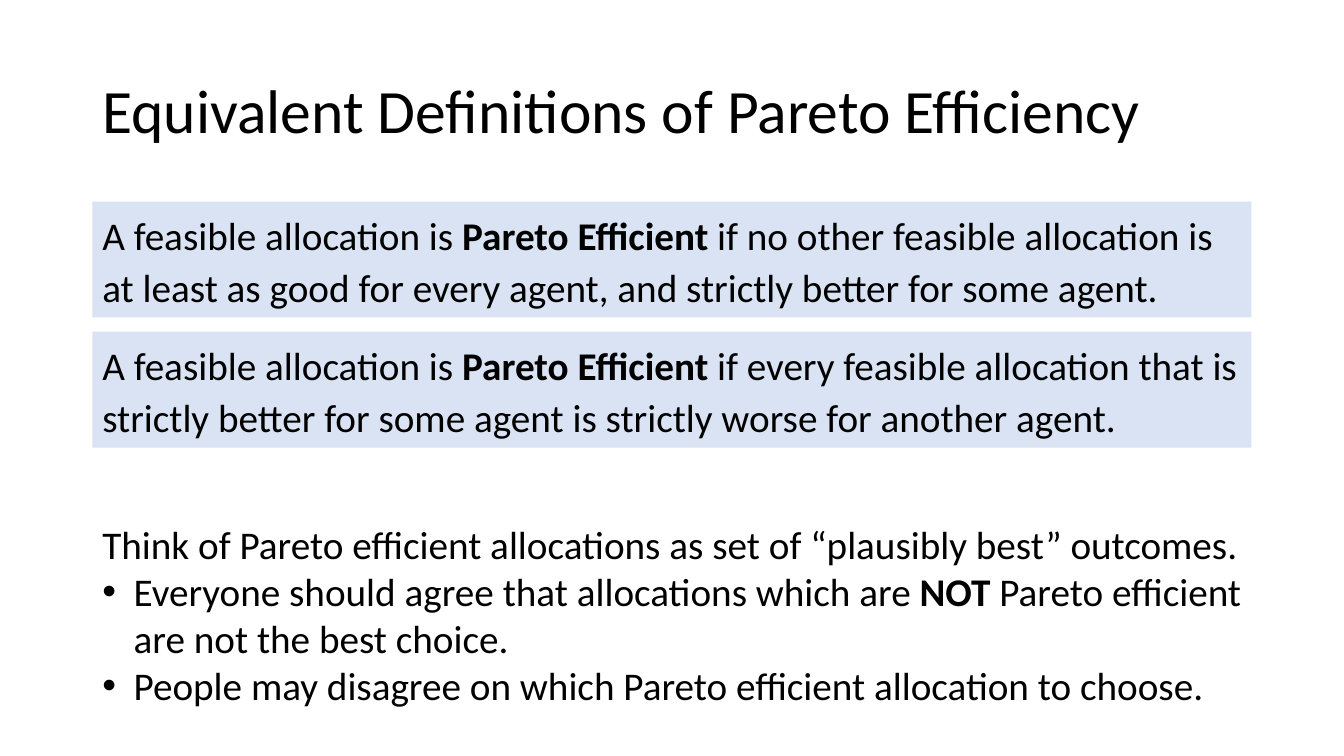
from dataclasses import dataclass

from lxml.etree import SubElement
from pptx import Presentation
from pptx.dml.color import RGBColor
from pptx.enum.shapes import MSO_SHAPE
from pptx.enum.text import MSO_ANCHOR, PP_ALIGN
from pptx.oxml.ns import qn
from pptx.util import Cm, Pt


@dataclass(frozen=True)
class Theme:
    font: str = "Calibri"
    text: RGBColor = RGBColor(0x00, 0x00, 0x00)
    panel: RGBColor = RGBColor(0xDA, 0xE3, 0xF3)
    title_size: Pt = Pt(44)
    body_size: Pt = Pt(28)


THEME = Theme()
LEFT, WIDTH = Cm(2.33), Cm(29.21)

TITLE = "Equivalent Definitions of Pareto Efficiency"
# Text between asterisks is bold
DEFINITIONS = [
    "A feasible allocation is *Pareto Efficient *if no other feasible allocation is "
    "at least as good for every agent, and strictly better for some agent.",
    "A feasible allocation is *Pareto Efficient *if every feasible allocation that is "
    "strictly better for some agent is strictly worse for another agent.",
]
INTRO = "Think of Pareto efficient allocations as set of “plausibly best” outcomes."
REMARKS = [
    "Everyone should agree that allocations which are *NOT *Pareto efficient "
    "are not the best choice.",
    "People may disagree on which Pareto efficient allocation to choose.",
]


def write(p, text, size, spacing=1.0):
    p.alignment = PP_ALIGN.LEFT
    p.line_spacing = spacing
    for i, part in enumerate(text.split("*")):
        r = p.add_run()
        r.text = part
        r.font.name = THEME.font
        r.font.size = size
        r.font.bold = i % 2 == 1
        r.font.color.rgb = THEME.text


def add_bullet(p, indent):
    pPr = p._p.get_or_add_pPr()
    pPr.set("marL", str(indent))
    pPr.set("indent", str(-indent))
    SubElement(pPr, qn("a:buFont")).set("typeface", "Arial")
    SubElement(pPr, qn("a:buChar")).set("char", "•")


def add_title(s, left, top, width, height):
    tf = s.shapes.add_textbox(left, top, width, height).text_frame
    tf.word_wrap = True
    tf.vertical_anchor = MSO_ANCHOR.MIDDLE
    write(tf.paragraphs[0], TITLE, THEME.title_size, 0.9)


def add_definitions(s, left, top, width, height):
    gap = Cm(0.36)
    panel_height = (height - gap * (len(DEFINITIONS) - 1)) // len(DEFINITIONS)
    for i, text in enumerate(DEFINITIONS):
        y = top + i * (panel_height + gap)
        sp = s.shapes.add_shape(MSO_SHAPE.RECTANGLE, left, y, width, panel_height)
        sp.shadow.inherit = False
        sp.fill.solid()
        sp.fill.fore_color.rgb = THEME.panel
        sp.line.fill.background()
        tf = sp.text_frame
        tf.word_wrap = True
        tf.vertical_anchor = MSO_ANCHOR.TOP
        write(tf.paragraphs[0], text, THEME.body_size, 1.1)


def add_remarks(s, left, top, width, height):
    tf = s.shapes.add_textbox(left, top, width, height).text_frame
    tf.word_wrap = True
    write(tf.paragraphs[0], INTRO, THEME.body_size)
    for text in REMARKS:
        p = tf.add_paragraph()
        write(p, text, THEME.body_size)
        add_bullet(p, Cm(0.79))


def main():
    prs = Presentation()
    prs.slide_width, prs.slide_height = Cm(33.87), Cm(19.05)
    s = prs.slides.add_slide(prs.slide_layouts[6])
    add_title(s, LEFT, Cm(1.01), WIDTH, Cm(3.68))
    add_definitions(s, LEFT, Cm(5.08), WIDTH, Cm(6.2))
    add_remarks(s, LEFT, Cm(12.98), WIDTH, Cm(5.05))
    prs.save("out.pptx")


if __name__ == "__main__":
    main()
